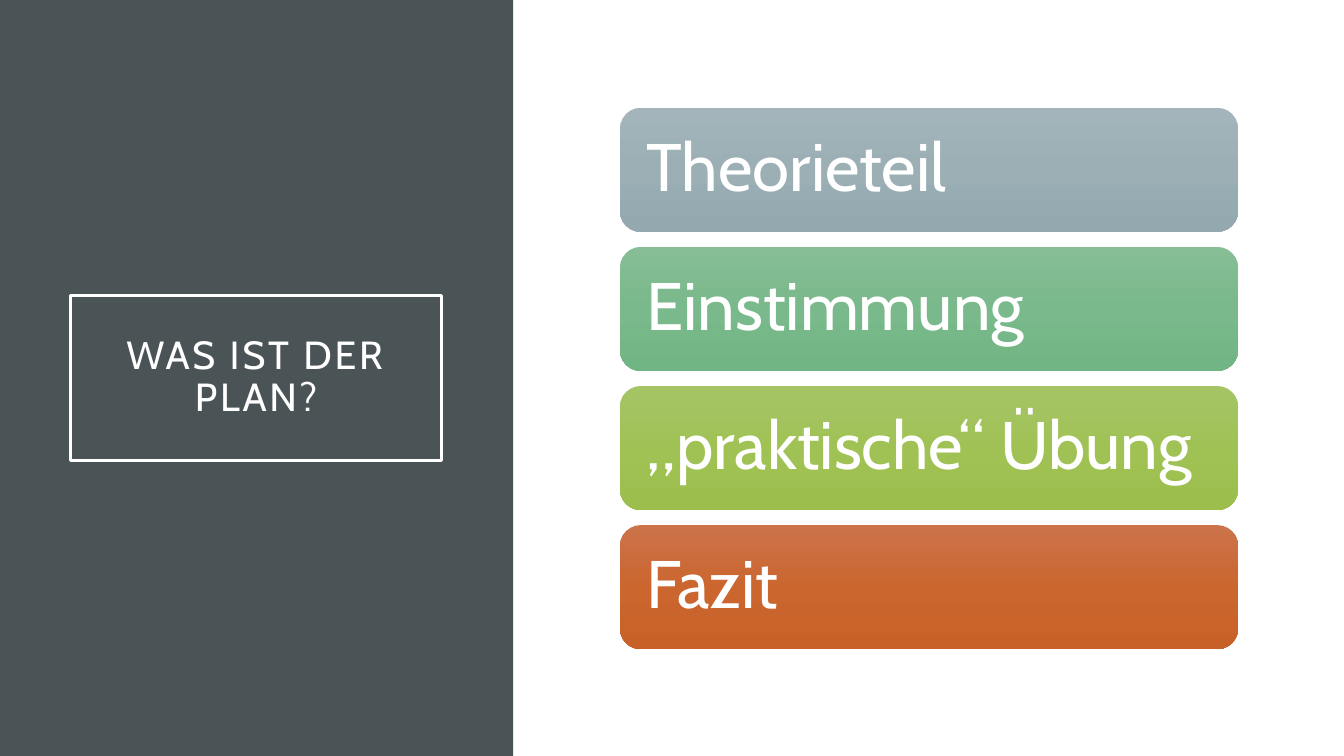
from copy import deepcopy

from pptx import Presentation
from pptx.dml.color import RGBColor
from pptx.enum.shapes import MSO_SHAPE
from pptx.enum.text import MSO_ANCHOR, PP_ALIGN
from pptx.oxml.ns import qn
from pptx.util import Inches, Pt

WHITE = RGBColor(0xFF, 0xFF, 0xFF)
SLATE = RGBColor(0x4A, 0x53, 0x56)
GRAY = (RGBColor(0xA3, 0xB5, 0xBB), RGBColor(0x9B, 0xAF, 0xB5), RGBColor(0x93, 0xA9, 0xAF))
GREEN = (RGBColor(0x86, 0xBD, 0x95), RGBColor(0x7A, 0xB9, 0x8B), RGBColor(0x72, 0xB5, 0x84))
LIME = (RGBColor(0xA5, 0xC4, 0x66), RGBColor(0xA0, 0xC2, 0x55), RGBColor(0x9B, 0xBE, 0x4D))
RUST = (RGBColor(0xCC, 0x73, 0x4B), RGBColor(0xCB, 0x66, 0x2F), RGBColor(0xC8, 0x61, 0x28))

FONT = "Cabin"
TOPICS = [
    ("Theorieteil", GRAY),
    ("Einstimmung", GREEN),
    ("„praktische“ Übung", LIME),
    ("Fazit", RUST),
]
TOP, STEP = 1.07, 1.38


def style(item, values):
    """Set each named format value on the item."""
    for name, value in values.items():
        setattr(item, name, value)


def add_box(slide, kind, left, top, width, height):
    """Add a preset shape with no shadow, fill or line."""
    box = slide.shapes.add_shape(
        kind, Inches(left), Inches(top), Inches(width), Inches(height))
    box.shadow.inherit = False
    box.fill.background()
    box.line.fill.background()
    return box


def shade(box, colors):
    """Fill the box with evenly spaced colours from top to bottom."""
    fill = box.fill
    fill.gradient()
    fill.gradient_angle = 270
    stops = box.element.spPr.find(qn("a:gradFill")).find(qn("a:gsLst"))
    stops.insert(1, deepcopy(stops[0]))
    for index, (stop, color) in enumerate(zip(fill.gradient_stops, colors)):
        stop.position = index / (len(colors) - 1)
        stop.color.rgb = color


def write(box, text, size, align, side):
    """Write one line of white text, centred in height."""
    frame = box.text_frame
    style(frame, {
        "word_wrap": True,
        "vertical_anchor": MSO_ANCHOR.MIDDLE,
        "margin_left": Inches(side),
        "margin_right": Inches(side),
        "margin_top": Inches(0.2),
        "margin_bottom": Inches(0.2),
    })
    para = frame.paragraphs[0]
    style(para, {"alignment": align, "line_spacing": 0.9})
    run = para.add_run()
    run.text = text
    style(run.font, {"name": FONT, "size": Pt(size)})
    run.font.color.rgb = WHITE
    return run


def add_panel(slide):
    """Add the dark panel on the left."""
    panel = add_box(slide, MSO_SHAPE.RECTANGLE, 0, 0, 5.09, 7.5)
    panel.fill.solid()
    panel.fill.fore_color.rgb = SLATE


def add_title(slide, text):
    """Add the framed title with spaced letters."""
    title = add_box(slide, MSO_SHAPE.RECTANGLE, 0.7, 2.93, 3.68, 1.64)
    title.line.color.rgb = WHITE
    title.line.width = Pt(2.5)
    run = write(title, text, 28, PP_ALIGN.CENTER, 0.2)
    run.font._element.set("spc", "200")


def add_topic(slide, top, text, colors):
    """Add one rounded bar that names a topic."""
    bar = add_box(slide, MSO_SHAPE.ROUNDED_RECTANGLE, 6.15, top, 6.13, 1.23)
    shade(bar, colors)
    write(bar, text, 48, PP_ALIGN.LEFT, 0.2)


def main():
    """Build the slide and save it."""
    deck = Presentation()
    style(deck, {"slide_width": Inches(13.33), "slide_height": Inches(7.5)})
    slide = deck.slides.add_slide(deck.slide_layouts[6])
    add_panel(slide)
    add_title(slide, "WAS IST DER PLAN?")
    for index, (text, colors) in enumerate(TOPICS):
        add_topic(slide, TOP + index * STEP, text, colors)
    deck.save("out.pptx")


if __name__ == "__main__":
    main()
